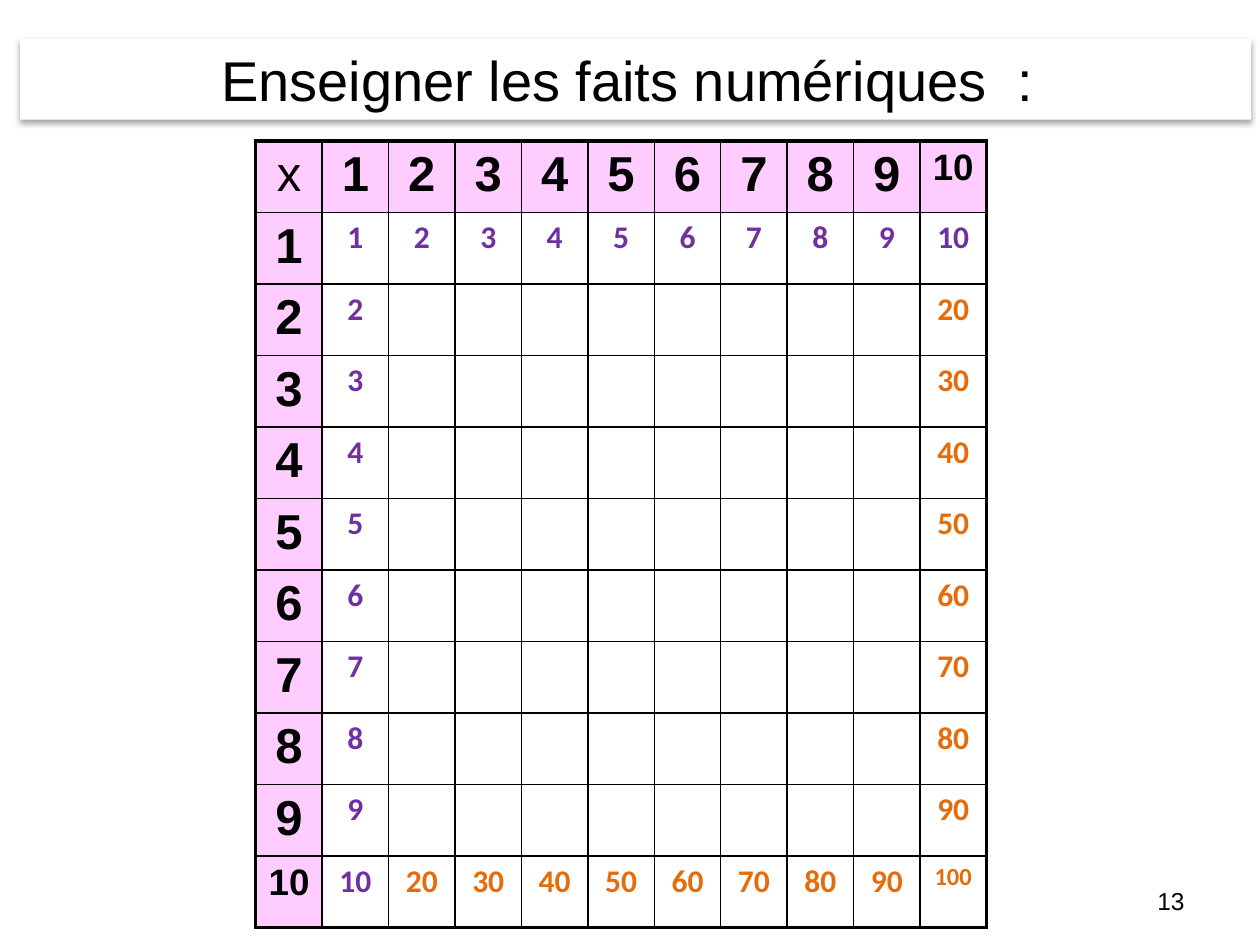
from dataclasses import dataclass

from lxml import etree
from pptx import Presentation
from pptx.dml.color import RGBColor
from pptx.enum.shapes import MSO_SHAPE
from pptx.enum.text import MSO_ANCHOR, PP_ALIGN
from pptx.oxml import parse_xml
from pptx.oxml.ns import nsdecls, qn
from pptx.util import Inches, Pt

RECTANGLE = MSO_SHAPE.RECTANGLE
TOP, MIDDLE = MSO_ANCHOR.TOP, MSO_ANCHOR.MIDDLE
CENTER, RIGHT = PP_ALIGN.CENTER, PP_ALIGN.RIGHT


@dataclass(frozen=True)
class Theme:
    black: str = "000000"
    white: str = "FFFFFF"
    header_fill: str = "FFCCFF"
    times_one: str = "7030A0"
    times_ten: str = "E46C0A"
    heading_font: str = "Arial"
    product_font: str = "Calibri"
    title_size: int = 32
    factor_size: int = 28
    ten_size: int = 21
    product_size: int = 18
    small_size: int = 14
    outer_line: float = 2.25
    inner_line: float = 1


@dataclass(frozen=True)
class Entry:
    text: str
    size: int
    font: str
    color: str
    bold: bool = True
    fill: str | None = None


THEME = Theme()
LAST = 10


def write(frame, text: str, *, size: int, font: str = THEME.heading_font,
          color: str = THEME.black, bold: bool = False,
          align=CENTER, anchor=TOP) -> None:
    frame.word_wrap = True
    frame.vertical_anchor = anchor
    paragraph = frame.paragraphs[0]
    paragraph.alignment = align
    run = paragraph.add_run()
    run.text = text
    run.font.size = Pt(size)
    run.font.name = font
    run.font.bold = bold
    run.font.color.rgb = RGBColor.from_string(color)


def entry_at(row: int, column: int) -> Entry | None:
    if row == 0 or column == 0:
        factor = row + column
        size = THEME.ten_size if factor == LAST else THEME.factor_size
        return Entry(str(factor or "x"), size, THEME.heading_font, THEME.black,
                     factor > 0, THEME.header_fill)
    if 1 not in (row, column) and LAST not in (row, column):
        return None
    product = row * column
    size = THEME.small_size if product == LAST * LAST else THEME.product_size
    color = THEME.times_one if 1 in (row, column) else THEME.times_ten
    return Entry(str(product), size, THEME.product_font, color)


def add_borders(cell, row: int, column: int) -> None:
    properties = cell._tc.get_or_add_tcPr()
    outer_edges = {"L": column == 0, "R": column == LAST,
                   "T": row == 0, "B": row == LAST}
    for side, is_outer in outer_edges.items():
        width = THEME.outer_line if is_outer else THEME.inner_line
        border = etree.SubElement(properties, qn(f"a:ln{side}"), w=str(Pt(width)))
        paint = etree.SubElement(border, qn("a:solidFill"))
        etree.SubElement(paint, qn("a:srgbClr"), val=THEME.black)


def add_multiplication_table(slide) -> None:
    count = LAST + 1
    width, height = Inches(5.8), Inches(6.23)
    grid = slide.shapes.add_table(count, count, Inches(2.03), Inches(1.12),
                                  width, height).table
    grid.first_row = grid.horz_banding = False
    for column in grid.columns:
        column.width = width // count
    for row in grid.rows:
        row.height = height // count
    for index in range(count * count):
        row, column = divmod(index, count)
        cell = grid.cell(row, column)
        add_borders(cell, row, column)
        cell.fill.background()
        entry = entry_at(row, column)
        if entry is None:
            continue
        if entry.fill:
            cell.fill.solid()
            cell.fill.fore_color.rgb = RGBColor.from_string(entry.fill)
        write(cell.text_frame, entry.text, size=entry.size, font=entry.font,
              color=entry.color, bold=entry.bold)


def add_title(slide) -> None:
    banner = slide.shapes.add_shape(RECTANGLE, Inches(0.16), Inches(0.31),
                                    Inches(9.77), Inches(0.64))
    banner.fill.solid()
    banner.fill.fore_color.rgb = RGBColor.from_string(THEME.white)
    banner.line.fill.background()
    banner.shadow.inherit = False
    effects = banner._element.spPr.find(qn("a:effectLst"))
    effects.append(parse_xml(
        f'<a:outerShdw {nsdecls("a")} blurRad="{Pt(3.1)}" dist="{Pt(1.8)}" '
        f'dir="5400000" rotWithShape="0"><a:srgbClr val="{THEME.black}">'
        '<a:alpha val="35000"/></a:srgbClr></a:outerShdw>'))
    write(banner.text_frame, "Enseigner les faits numériques  : ",
          size=THEME.title_size)


def add_page_number(slide) -> None:
    page_number = slide.shapes.add_textbox(Inches(7.17), Inches(6.95),
                                           Inches(2.33), Inches(0.4))
    write(page_number.text_frame, "13", size=THEME.small_size,
          align=RIGHT, anchor=MIDDLE)


def main() -> None:
    presentation = Presentation()
    presentation.slide_width = Inches(10)
    presentation.slide_height = Inches(7.5)
    slide = presentation.slides.add_slide(presentation.slide_layouts[6])
    add_page_number(slide)
    add_multiplication_table(slide)
    add_title(slide)
    presentation.save("out.pptx")


if __name__ == "__main__":
    main()
